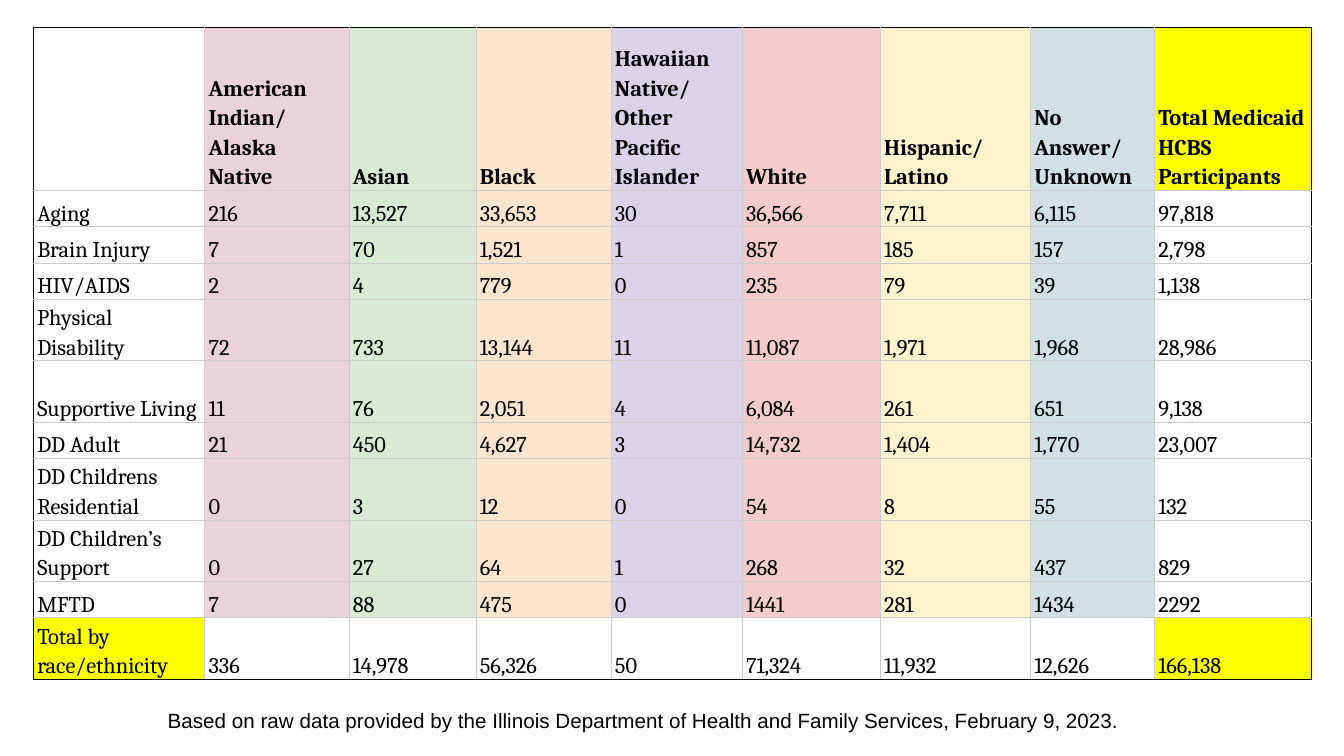
from lxml import etree
from pptx import Presentation
from pptx.dml.color import RGBColor
from pptx.enum import text
from pptx.oxml.ns import qn
from pptx.util import Inches, Pt

COLORS = {
    "black": "000000", "grid": "CCCCCC", "white": "FFFFFF", "yellow": "FFFF00",
    "pink": "EAD1DC", "green": "D9EAD3", "orange": "FCE5CD", "purple": "D9D2E9",
    "red": "F4CCCC", "cream": "FFF2CC", "teal": "D0E0E3",
}
COLUMNS = [
    ("", 1.7, None),
    ("American Indian/\nAlaska Native", 1.43, "pink"),
    ("Asian", 1.26, "green"),
    ("Black", 1.34, "orange"),
    ("Hawaiian Native/ Other Pacific Islander", 1.3, "purple"),
    ("White", 1.37, "red"),
    ("Hispanic/ Latino", 1.49, "cream"),
    ("No Answer/ Unknown", 1.23, "teal"),
    ("Total Medicaid HCBS Participants", 1.56, None),
]
PROGRAMS = [
    ("Aging", "216", "13,527", "33,653", "30", "36,566", "7,711", "6,115", "97,818"),
    ("Brain Injury", "7", "70", "1,521", "1", "857", "185", "157", "2,798"),
    ("HIV/AIDS", "2", "4", "779", "0", "235", "79", "39", "1,138"),
    ("Physical Disability", "72", "733", "13,144", "11", "11,087", "1,971", "1,968", "28,986"),
    ("Supportive Living", "11", "76", "2,051", "4", "6,084", "261", "651", "9,138"),
    ("DD Adult", "21", "450", "4,627", "3", "14,732", "1,404", "1,770", "23,007"),
    ("DD Childrens Residential", "0", "3", "12", "0", "54", "8", "55", "132"),
    ("DD Children’s Support", "0", "27", "64", "1", "268", "32", "437", "829"),
    ("MFTD", "7", "88", "475", "0", "1441", "281", "1434", "2292"),
    ("Total by race/ethnicity", "336", "14,978", "56,326", "50", "71,324", "11,932", "12,626", "166,138"),
]
SOURCE_NOTE = ("Based on raw data provided by the Illinois Department of Health "
               "and Family Services, February 9, 2023.")
HEADER_HEIGHT, SINGLE, DOUBLE = 1.62, 0.36, 0.61
TWO_LINE_CHARS = 14

rows = [[name for name, _, _ in COLUMNS]] + PROGRAMS
heights = [HEADER_HEIGHT] + [DOUBLE if len(row[0]) > TWO_LINE_CHARS else SINGLE for row in PROGRAMS]
LAST_ROW, LAST_COL = len(rows) - 1, len(COLUMNS) - 1


def rgb(name):
    return RGBColor.from_string(COLORS[name])


def fill_name(i, j):
    if (i, j) in ((0, LAST_COL), (LAST_ROW, 0), (LAST_ROW, LAST_COL)):
        return "yellow"
    return "white" if i == LAST_ROW else COLUMNS[j][2]


def style_text(tf, font, size, bold=False):
    for p in tf.paragraphs:
        for r in p.runs:
            r.font.name, r.font.size, r.font.bold = font, Pt(size), bold
            r.font.color.rgb = rgb("black")


def add_borders(cell, i, j):
    tcPr = cell._tc.get_or_add_tcPr()
    outer = {"lnL": j == 0, "lnR": j == LAST_COL, "lnT": i == 0, "lnB": i == LAST_ROW}
    for side, is_outer in outer.items():
        ln = etree.SubElement(tcPr, qn("a:" + side), w=str(Pt(0.5)))
        solid = etree.SubElement(ln, qn("a:solidFill"))
        etree.SubElement(solid, qn("a:srgbClr"), val=COLORS["black" if is_outer else "grid"])


def format_cell(cell, i, j):
    cell.text_frame.text = rows[i][j]
    cell.vertical_anchor = text.MSO_ANCHOR.BOTTOM
    cell.margin_left = cell.margin_right = Inches(0.04)
    cell.margin_top = cell.margin_bottom = 0
    for p in cell.text_frame.paragraphs:
        p.line_spacing = 1.15
    style_text(cell.text_frame, "Cambria", 16, i == 0)
    add_borders(cell, i, j)
    fill = fill_name(i, j)
    if fill:
        cell.fill.solid()
        cell.fill.fore_color.rgb = rgb(fill)
    else:
        cell.fill.background()


def main():
    prs = Presentation()
    prs.slide_width, prs.slide_height = Inches(13.33), Inches(7.5)
    s = prs.slides.add_slide(prs.slide_layouts[6])

    width = sum(w for _, w, _ in COLUMNS)
    table = s.shapes.add_table(len(rows), len(COLUMNS), Inches(0.33), Inches(0.27),
                               Inches(width), Inches(sum(heights))).table
    table.first_row = table.horz_banding = False
    for col, (_, w, _) in zip(table.columns, COLUMNS):
        col.width = Inches(w)
    for i, height in enumerate(heights):
        table.rows[i].height = Inches(height)
        for j in range(len(COLUMNS)):
            format_cell(table.cell(i, j), i, j)

    note = s.shapes.add_textbox(Inches(0.74), Inches(6.9), Inches(11.28), Inches(0.52))
    tf = note.text_frame
    tf.word_wrap = True
    tf.margin_left = tf.margin_right = tf.margin_top = tf.margin_bottom = Inches(0.13)
    tf.text = SOURCE_NOTE
    tf.paragraphs[0].alignment = text.PP_ALIGN.CENTER
    style_text(tf, "Arial", 14.7)

    prs.save("out.pptx")


if __name__ == "__main__":
    main()
